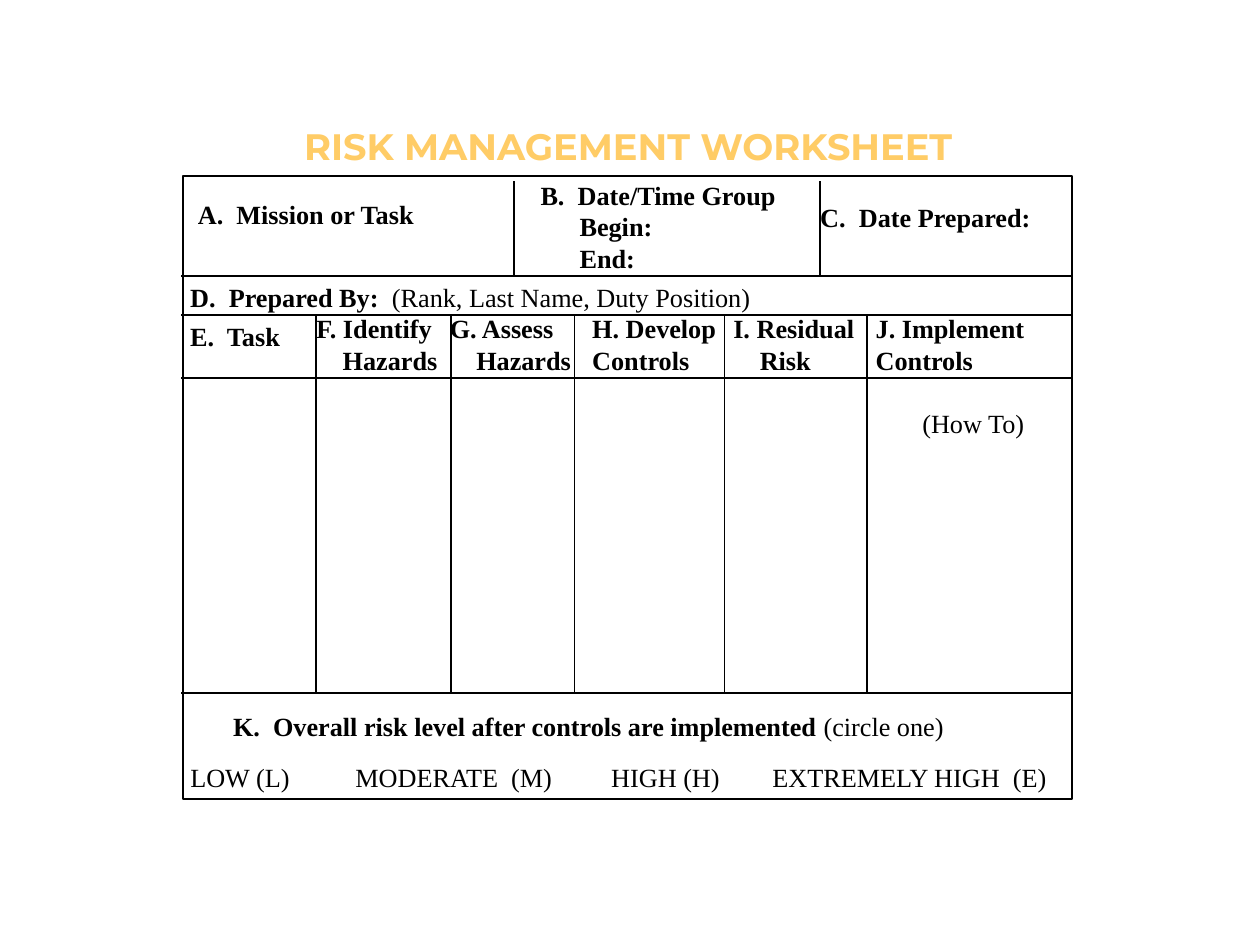
import pptx
import pptx.util
import pptx.dml.color
import pptx.enum.shapes
import pptx.enum.text
from lxml import etree

Inches, Pt = pptx.util.Inches, pptx.util.Pt
MSO_ANCHOR = pptx.enum.text.MSO_ANCHOR
MSO_AUTO_SIZE = pptx.enum.text.MSO_AUTO_SIZE
NS = "{http://schemas.openxmlformats.org/drawingml/2006/main}"
COLORS = {"title": "FFCC66", "ink": "000000"}
RGB = {k: pptx.dml.color.RGBColor.from_string(v) for k, v in COLORS.items()}

prs = pptx.Presentation()
prs.slide_width, prs.slide_height = Inches(10), Inches(7.5)
s = prs.slides.add_slide(prs.slide_layouts[5])


def add_label(x, y, w, h, paragraphs, tabs=()):
    """Each paragraph is (indent, [(text, bold), ...])."""
    tf = s.shapes.add_textbox(Inches(x), Inches(y), Inches(w), Inches(h)).text_frame
    tf.word_wrap = bool(tabs)
    tf.margin_left = tf.margin_right = Inches(0.07)
    tf.margin_top = tf.margin_bottom = Inches(0.04)
    for i, (indent, runs) in enumerate(paragraphs):
        p = tf.paragraphs[0] if i == 0 else tf.add_paragraph()
        pPr = p._p.get_or_add_pPr()
        pPr.set("marL", str(Inches(indent)))
        if tabs:
            tab_list = etree.SubElement(pPr, NS + "tabLst")
            for pos in tabs:
                etree.SubElement(tab_list, NS + "tab", pos=str(Inches(pos)), algn="l")
        for text, bold in runs:
            r = p.add_run()
            r.text = text
            r.font.name, r.font.size, r.font.bold = "Times New Roman", Pt(15), bold
            r.font.color.rgb = RGB["ink"]


def add_rule(x1, y1, x2, y2):
    line = s.shapes.add_connector(pptx.enum.shapes.MSO_CONNECTOR.STRAIGHT,
                                  Inches(x1), Inches(y1), Inches(x2), Inches(y2))
    line.line.color.rgb, line.line.width = RGB["ink"], Pt(1)
    etree.SubElement(line._element.spPr, NS + "effectLst")


# Title
title = s.shapes.title
title.left, title.top, title.width, title.height = (
    Inches(2.17), Inches(0.94), Inches(5.63), Inches(0.43))
tf = title.text_frame
tf.word_wrap, tf.auto_size = False, MSO_AUTO_SIZE.NONE
tf.vertical_anchor = MSO_ANCHOR.TOP
tf.margin_left = tf.margin_right = Inches(0.07)
tf.margin_top = tf.margin_bottom = Inches(0.04)
p = tf.paragraphs[0]
p.alignment = pptx.enum.text.PP_ALIGN.CENTER
r = p.add_run()
r.text = "RISK MANAGEMENT WORKSHEET"
r.font.name, r.font.size, r.font.bold = "Montserrat", Pt(21), True
r.font.color.rgb = RGB["title"]

# Form frame and rules
frame = s.shapes.add_shape(pptx.enum.shapes.MSO_SHAPE.RECTANGLE,
                           Inches(1.45), Inches(1.4), Inches(7.06), Inches(4.94))
frame.shadow.inherit = False
frame.fill.background()
frame.line.color.rgb, frame.line.width = RGB["ink"], Pt(1)
for y in (2.19, 2.5, 3, 5.5):
    add_rule(1.44, y, 8.5, y)
for x in (4.08, 6.51):
    add_rule(x, 1.44, x, 2.18)
for x in (2.51, 3.58, 4.56, 5.75, 6.88):
    add_rule(x, 2.5, x, 5.49)

# Mission, dates and preparer
add_label(1.5, 1.53, 1.88, 0.33, [(0, [("A.  Mission or Task", True)])])
add_label(4.22, 1.38, 2.03, 0.83, [(0, [("B.  Date/Time Group", True)]),
                                   (0.31, [("Begin:", True)]),
                                   (0.31, [("End:", True)])])
add_label(6.44, 1.56, 1.84, 0.33, [(0, [("C.  Date Prepared:", True)])])
add_label(1.44, 2.19, 4.64, 0.33, [(0, [("D.  Prepared By:", True),
                                        ("  (Rank, Last Name, Duty Position)", False)])])

# Column headings
add_label(1.44, 2.5, 0.87, 0.33, [(0, [("E.  Task", True)])])
for x, w, first, second, indent in [
    (2.44, 1.12, "F. Identify", "Hazards", 0.21),
    (3.5, 1.12, "G. Assess", "Hazards", 0.21),
    (4.63, 1.19, "H. Develop", "Controls", 0),
    (5.75, 1.12, "I. Residual", "Risk", 0.21),
    (6.88, 1.39, "J. Implement", "Controls", 0),
]:
    add_label(x, 2.44, w, 0.58, [(0, [(first, True)]), (indent, [(second, True)])])
add_label(7.25, 3.19, 0.97, 0.33, [(0, [("(How To)", False)])])

# Overall risk level
add_label(1.78, 5.6, 5.83, 0.33, [
    (0, [("K.  Overall risk level after controls are implemented ", True),
         ("(circle one)", False)])])
levels = ["LOW (L)", "MODERATE  (M)", "HIGH (H)", "EXTREMELY HIGH  (E)"]
add_label(1.44, 6, 7.02, 0.33, [(0, [("\t".join(levels), False)])],
          tabs=(1.31, 3.34, 4.62))

prs.save("out.pptx")
